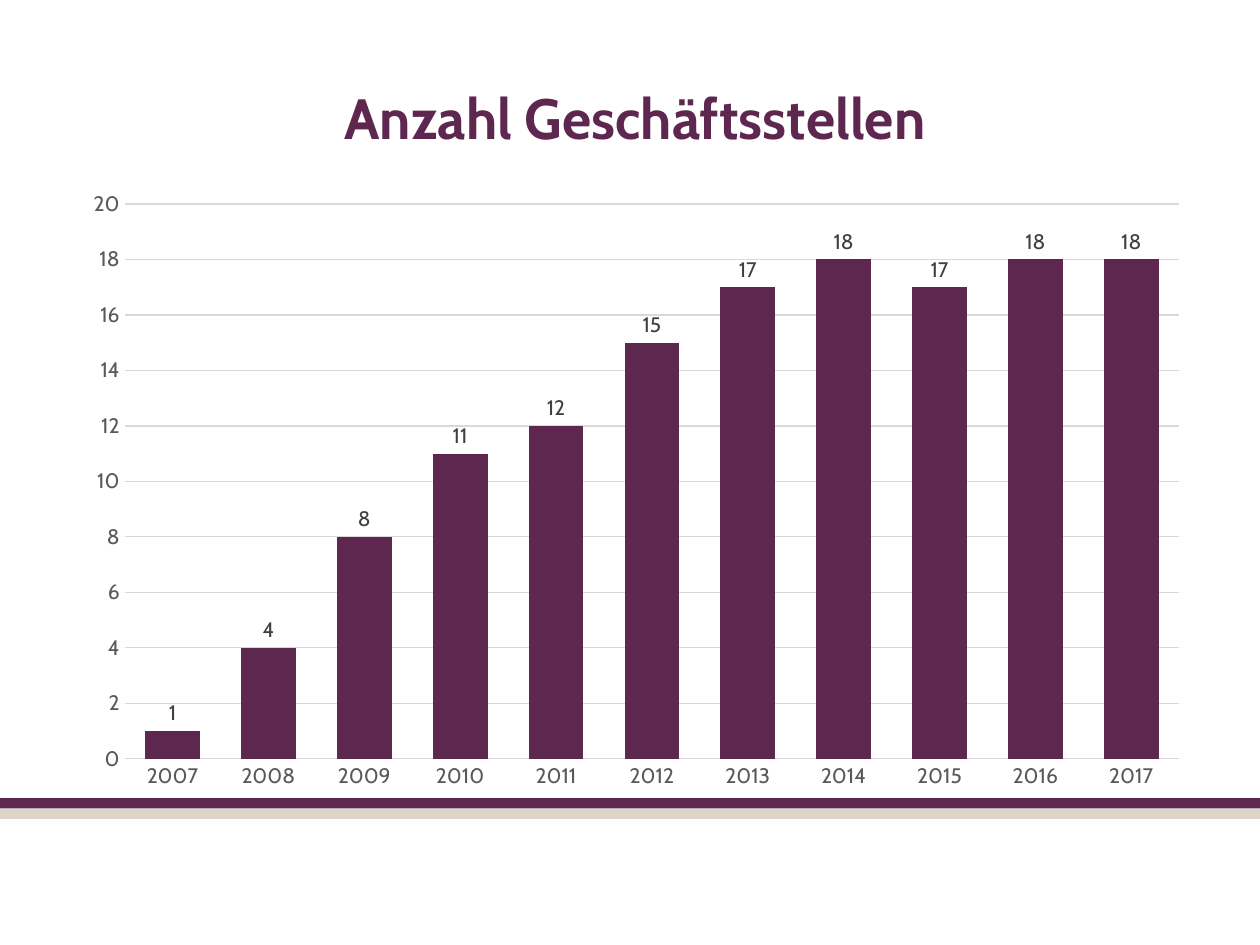
from dataclasses import dataclass

from pptx import Presentation
from pptx.chart.data import CategoryChartData
from pptx.dml.color import RGBColor
from pptx.enum.chart import XL_CHART_TYPE as ChartType
from pptx.enum.chart import XL_LABEL_POSITION as LabelPosition
from pptx.enum.chart import XL_TICK_MARK as TickMark
from pptx.enum.shapes import MSO_SHAPE as Shape
from pptx.enum.text import MSO_ANCHOR as Anchor
from pptx.enum.text import MSO_AUTO_SIZE as AutoSize
from pptx.enum.text import PP_ALIGN as Align
from pptx.oxml import parse_xml
from pptx.oxml.ns import nsdecls
from pptx.util import Cm, Pt

FONT = "Cabin"
PURPLE, BEIGE = "5E2750", "DDD5C7"
AXIS_TEXT, LABEL_TEXT, GRID = "595959", "404040", "D9D9D9"
LEFT, WIDTH = Cm(1.37), Cm(22.86)
BRANCHES = [1, 4, 8, 11, 12, 15, 17, 18, 17, 18, 18]
FIRST_YEAR = 2007


@dataclass
class Stripe:
    top: float
    color: str
    height: float = 0.21


STRIPES = [Stripe(16.3, BEIGE), Stripe(16.09, PURPLE)]


def rgb(color: str) -> RGBColor:
    return RGBColor.from_string(color)


def style_font(font, size: float, color: str, bold: bool = False) -> None:
    font.name, font.size, font.bold = FONT, Pt(size), bold
    font.color.rgb = rgb(color)


def style_line(line, color: str) -> None:
    line.color.rgb = rgb(color)
    line.width = Pt(0.75)


def draw_stripe(page, stripe: Stripe, width: int) -> None:
    bar = page.shapes.add_shape(
        Shape.RECTANGLE, 0, Cm(stripe.top), width, Cm(stripe.height))
    bar.shadow.inherit = False
    bar.fill.solid()
    bar.fill.fore_color.rgb = rgb(stripe.color)
    bar.line.fill.background()


def write_title(page, text: str) -> None:
    title = page.shapes.title
    title.left, title.top, title.width, title.height = LEFT, Cm(1.47), WIDTH, Cm(1.78)
    box = title.text_frame
    box.auto_size = AutoSize.NONE
    box.vertical_anchor = Anchor.MIDDLE
    para = box.paragraphs[0]
    para.alignment = Align.CENTER
    span = para.add_run()
    span.text = text
    style_font(span.font, 32.4, PURPLE, bold=True)


def style_axis(axis) -> None:
    axis.major_tick_mark = axis.minor_tick_mark = TickMark.NONE
    style_font(axis.tick_labels.font, 12, AXIS_TEXT)


def place_plot(chart, x: float, y: float, w: float, h: float) -> None:
    """Fix the inner plot area, in fractions of the chart."""
    plot_area = chart.plots[0]._element.getparent()
    for old in plot_area.findall("{*}layout"):
        plot_area.remove(old)
    sizes = "".join(f'<c:{tag} val="{value}"/>'
                    for tag, value in zip("xywh", (x, y, w, h)))
    plot_area.insert(0, parse_xml(
        f'<c:layout {nsdecls("c")}><c:manualLayout><c:layoutTarget val="inner"/>'
        f'<c:xMode val="edge"/><c:yMode val="edge"/>{sizes}'
        "</c:manualLayout></c:layout>"))


def draw_chart(page) -> None:
    data = CategoryChartData()
    data.categories = [str(FIRST_YEAR + i) for i in range(len(BRANCHES))]
    data.add_series("Series 1", BRANCHES)
    chart = page.shapes.add_chart(
        ChartType.COLUMN_CLUSTERED, LEFT, Cm(3.61), WIDTH, Cm(12.57), data).chart
    chart.has_legend = chart.has_title = False
    style_font(chart.font, 10, "000000")
    place_plot(chart, 0.05, 0.04, 0.93, 0.89)

    # Axes and gridlines
    years, counts = chart.category_axis, chart.value_axis
    for axis in (years, counts):
        style_axis(axis)
    style_line(years.format.line, GRID)
    counts.format.line.fill.background()
    counts.minimum_scale, counts.maximum_scale, counts.major_unit = 0, 20, 2
    counts.has_major_gridlines = True
    style_line(counts.major_gridlines.format.line, GRID)

    # Columns and their values
    plot = chart.plots[0]
    plot.gap_width = 75
    plot.vary_by_categories = False
    columns = plot.series[0]
    columns.format.fill.solid()
    columns.format.fill.fore_color.rgb = rgb(PURPLE)
    labels = columns.data_labels
    labels.show_value = True
    labels.position = LabelPosition.OUTSIDE_END
    style_font(labels.font, 12, LABEL_TEXT)


def main() -> None:
    deck = Presentation()
    deck.slide_width, deck.slide_height = Cm(25.4), Cm(19.05)
    page = deck.slides.add_slide(deck.slide_layouts[5])
    for stripe in STRIPES:
        draw_stripe(page, stripe, deck.slide_width)
    write_title(page, "Anzahl Geschäftsstellen")
    draw_chart(page)
    deck.save("out.pptx")


if __name__ == "__main__":
    main()
